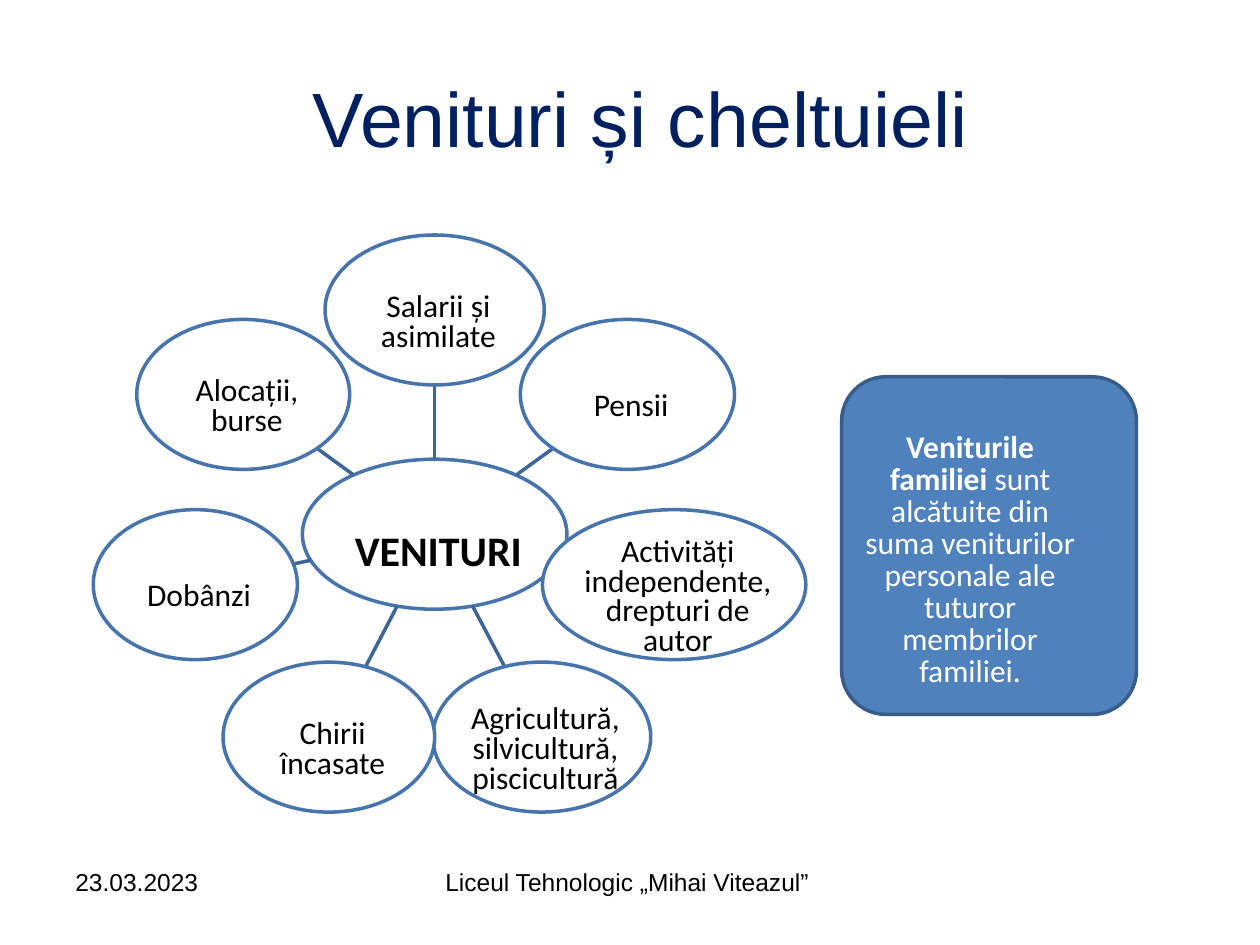
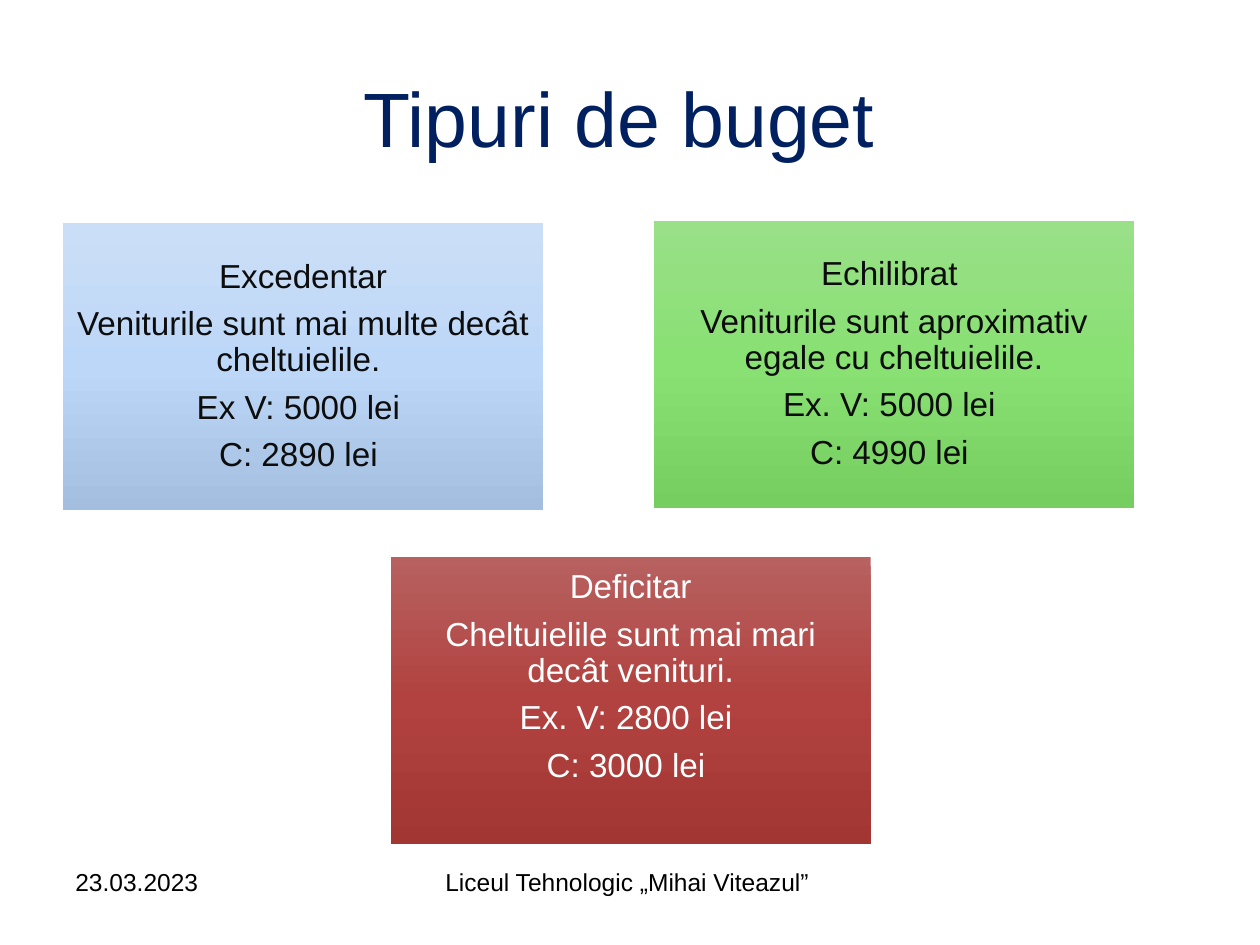
from copy import deepcopy
from math import hypot

from pptx import Presentation
from pptx.dml.color import RGBColor
from pptx.enum.shapes import MSO_CONNECTOR as Conn, MSO_SHAPE as Geo
from pptx.enum.text import MSO_ANCHOR as Anchor, PP_ALIGN as Align
from pptx.oxml.ns import qn
from pptx.oxml.xmlchemy import OxmlElement
from pptx.util import Inches, Pt

TITLES = [" Venituri și cheltuieli", "Tipuri de buget "]
FOOTERS = [
    ("23.03.2023", (0.5, 6.83, 2.33, 0.52), Align.LEFT),
    ("Liceul Tehnologic „Mihai Viteazul” ", (3.42, 6.83, 3.17, 0.52), Align.CENTER),
]
HUB = ("VENITURI", 3.45, 4.24, 2.1)
NODES = [
    ("Salarii și\vasimilate", 3.45, 2.46, 1.74),
    ("Pensii", 4.98, 3.13, 1.7),
    ("Activități\vindependente,\vdrepturi de\vautor", 5.35, 4.64, 2.09),
    ("Agricultură,\vsilvicultură,\vpiscicultură", 4.3, 5.85, 1.73),
    ("Chirii\vîncasate", 2.61, 5.85, 1.68),
    ("Dobânzi", 1.55, 4.64, 1.62),
    ("Alocații,\vburse", 1.93, 3.13, 1.69),
]
OVAL = 1.19
CARD = (6.68, 2.99, 2.34, 2.68)
NOTE = [("Veniturile familiei", True),
        (" sunt alcătuite din suma veniturilor personale ale tuturor membrilor familiei.", False)]
TYPES = [
    (0.5, 1.77, ("CBDEF7", "BDD7F8", "A4BEE0"), "0D0D0D", 0.08,
     ["Excedentar", "Veniturile sunt mai multe decât cheltuielile. ",
      "Ex V: 5000 lei ", "C: 2890 lei "]),
    (5.19, 1.75, ("99E088", "89E073", "76CD60"), "0D0D0D", 0.08,
     ["Echilibrat ", "Veniturile sunt aproximativ egale cu cheltuielile.",
      "Ex. V: 5000 lei ", "C: 4990 lei "]),
    (3.1, 4.42, ("B76160", "B1423F", "A23633"), "FFFFFF", 0.45,
     ["Deficitar", "Cheltuielile sunt mai mari decât venituri.",
      "Ex. V: 2800 lei ", "C: 3000 lei "]),
]
BOX = (3.81, 2.28)
HEAD = {"name": "Arial", "size": Pt(44), "bold": False}
FOOT = {"name": "Arial", "size": Pt(14)}
CORE = {"name": "Calibri", "size": Pt(24), "bold": True}
LABEL = {"name": "Calibri", "size": Pt(18), "bold": False}
KIND = {"name": "Arial", "size": Pt(19)}


def color(code):
    return RGBColor.from_string(code)


def apply(item, values):
    for key, value in values.items():
        setattr(item, key, value)


def write(frame, lines, look, ink, align=Align.CENTER, **space):
    for num, line in enumerate(lines):
        para = frame.paragraphs[0] if num == 0 else frame.add_paragraph()
        para.text = line
        apply(para, {"alignment": align, **space})
        for run in para.runs:
            apply(run.font, look)
            run.font.color.rgb = color(ink)


def pad(frame, left, top, right, bottom):
    names = ("margin_left", "margin_top", "margin_right", "margin_bottom")
    apply(frame, dict(zip(names, map(Inches, (left, top, right, bottom)))))
    frame.vertical_anchor = Anchor.MIDDLE


def draw(slide, geo, place, fill=None, line=None):
    shape = slide.shapes.add_shape(geo, *map(Inches, place))
    shape.shadow.inherit = False
    if fill:
        shape.fill.solid()
        shape.fill.fore_color.rgb = color(fill)
    if line:
        shape.line.color.rgb = color(line)
        shape.line.width = Pt(2)
    else:
        shape.line.fill.background()
    return shape


def start(deck, title):
    slide = deck.slides.add_slide(deck.slide_layouts[5])
    head = slide.shapes.title
    apply(head, dict(zip(("left", "top", "width", "height"), map(Inches, (0.5, 0.3, 9, 1.25)))))
    head.text_frame.vertical_anchor = Anchor.MIDDLE
    write(head.text_frame, [title], HEAD, "002060")
    for text, place, align in FOOTERS:
        frame = slide.shapes.add_textbox(*map(Inches, place)).text_frame
        frame.word_wrap = True
        write(frame, [text], FOOT, "000000", align)
    return slide


def spoke(slide, hub, node):
    _, hx, hy, hw = hub
    _, nx, ny, nw = node
    dx, dy = nx - hx, ny - hy
    near, far = (1 / hypot(2 * dx / wide, 2 * dy / OVAL) for wide in (hw, nw))
    ends = (hx + dx * near, hy + dy * near, nx - dx * far, ny - dy * far)
    line = slide.shapes.add_connector(Conn.STRAIGHT, *map(Inches, ends))
    line.line.color.rgb = color("3D6696")
    line.line.width = Pt(2)
    line._element.spPr.append(OxmlElement("a:effectLst"))


def oval(slide, node, look, drop, pitch):
    text, x, y, wide = node
    place = (x - wide / 2, y - OVAL / 2, wide, OVAL)
    frame = draw(slide, Geo.OVAL, place, "FFFFFF", "4774AB").text_frame
    pad(frame, 0.06, drop, 0, 0)
    frame.word_wrap = False
    write(frame, [text], look, "000000", line_spacing=Pt(pitch))


def income(deck):
    slide = start(deck, TITLES[0])
    oval(slide, HUB, CORE, 0.34, 22.5)
    for node in NODES:
        spoke(slide, HUB, node)
        oval(slide, node, LABEL, 0.22, 16.9)
    card = draw(slide, Geo.ROUNDED_RECTANGLE, CARD, "4F81BD", "385D8A")
    card.adjustments[0] = 0.15
    frame = card.text_frame
    frame.word_wrap = True
    pad(frame, 0.06, 0.24, 0.36, 0)
    para = frame.paragraphs[0]
    apply(para, {"alignment": Align.CENTER, "line_spacing": Pt(18.35)})
    for text, bold in NOTE:
        run = para.add_run()
        run.text = text
        apply(run.font, {**LABEL, "bold": bold})
        run.font.color.rgb = color("FFFFFF")


def shade(shape, tones):
    shape.fill.gradient()
    shape.fill.gradient_angle = 270
    first = shape._element.spPr.find(".//" + qn("a:gs"))
    first.addnext(deepcopy(first))
    for num, (stop, tone) in enumerate(zip(shape.fill.gradient_stops, tones)):
        stop.position = num / 2
        stop.color.rgb = color(tone)


def budget(deck):
    slide = start(deck, TITLES[1])
    for left, top, tones, ink, base, lines in TYPES:
        box = draw(slide, Geo.RECTANGLE, (left, top, *BOX))
        shade(box, tones)
        frame = box.text_frame
        frame.word_wrap = True
        pad(frame, 0.08, 0.08, 0.08, base)
        write(frame, lines, KIND, ink, line_spacing=0.9, space_after=Pt(6.65))


def main():
    deck = Presentation()
    deck.slide_width, deck.slide_height = Inches(10), Inches(7.5)
    income(deck)
    budget(deck)
    deck.save("out.pptx")


if __name__ == "__main__":
    main()
